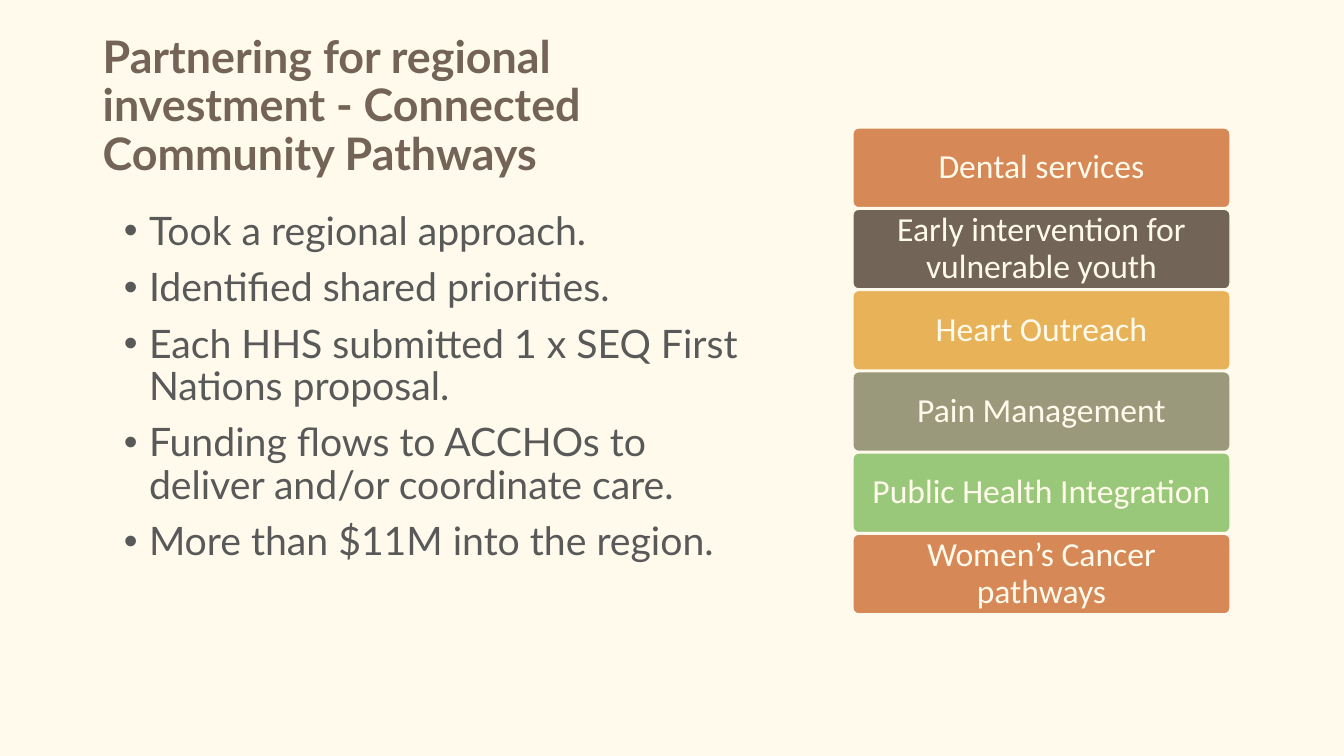
import pptx
import pptx.util
import pptx.dml.color
import pptx.enum.shapes
import pptx.enum.text
import pptx.oxml.ns
import lxml.etree

Inches = pptx.util.Inches
Pt = pptx.util.Pt

COLORS = {
    "cream": "FFFAEB",
    "title": "736457",
    "body": "595959",
    "orange": "D68857",
    "brown": "736458",
    "gold": "E8B259",
    "olive": "9B997B",
    "green": "9AC87A",
}

BULLETS = [
    "Took a regional approach.",
    "Identified shared priorities.",
    "Each HHS submitted 1 x SEQ First Nations proposal.",
    "Funding flows to ACCHOs to deliver and/or coordinate care.",
    "More than $11M into the region.",
]

PATHWAYS = [
    ("Dental services", "orange"),
    ("Early intervention for vulnerable youth", "brown"),
    ("Heart Outreach", "gold"),
    ("Pain Management", "olive"),
    ("Public Health Integration", "green"),
    ("Women’s Cancer pathways", "orange"),
]


class SlideBuilder:
    """Hold the slide and its text style, and draw each kind of element."""

    def __init__(self, prs):
        self.slide = prs.slides.add_slide(prs.slide_layouts[6])
        self.line_spacing = 0.9
        fill = self.slide.background.fill
        fill.solid()
        fill.fore_color.rgb = self.rgb("cream")

    def rgb(self, name):
        return pptx.dml.color.RGBColor.from_string(COLORS[name])

    def add_text(self, p, text, font, size, color, bold=False):
        p.line_spacing = self.line_spacing
        r = p.add_run()
        r.text = text
        r.font.name = font
        r.font.size = Pt(size)
        r.font.bold = bold
        r.font.color.rgb = self.rgb(color)

    def text_frame(self, left, top, width, height):
        sp = self.slide.shapes.add_textbox(
            Inches(left), Inches(top), Inches(width), Inches(height))
        sp.text_frame.word_wrap = True
        return sp.text_frame

    def title(self, text, left, top, width, height):
        tf = self.text_frame(left, top, width, height)
        tf.vertical_anchor = pptx.enum.text.MSO_ANCHOR.MIDDLE
        self.add_text(tf.paragraphs[0], text, "Lato", 32, "title", bold=True)

    def bullets(self, items, left, top, width, height):
        tf = self.text_frame(left, top, width, height)
        for i, item in enumerate(items):
            p = tf.add_paragraph() if i else tf.paragraphs[0]
            pPr = p._p.get_or_add_pPr()
            pPr.set("marL", str(Inches(0.25)))
            pPr.set("indent", str(Inches(-0.25)))
            for tag, key, value in (("a:buFont", "typeface", "Arial"),
                                    ("a:buChar", "char", "•")):
                bullet = lxml.etree.SubElement(pPr, pptx.oxml.ns.qn(tag))
                bullet.set(key, value)
            if i:
                p.space_before = Pt(10)
            self.add_text(p, item, "Lato", 28, "body")

    def block(self, text, color, left, top, width, height):
        sp = self.slide.shapes.add_shape(
            pptx.enum.shapes.MSO_SHAPE.ROUNDED_RECTANGLE,
            Inches(left), Inches(top), Inches(width), Inches(height))
        sp.adjustments[0] = 0.07
        sp.shadow.inherit = False
        sp.fill.solid()
        sp.fill.fore_color.rgb = self.rgb(color)
        sp.line.color.rgb = self.rgb("cream")
        sp.line.width = Pt(1)
        tf = sp.text_frame
        tf.word_wrap = True
        tf.vertical_anchor = pptx.enum.text.MSO_ANCHOR.MIDDLE
        tf.margin_left = tf.margin_right = Inches(0.08)
        tf.margin_top = tf.margin_bottom = Inches(0.06)
        p = tf.paragraphs[0]
        p.alignment = pptx.enum.text.PP_ALIGN.CENTER
        self.add_text(p, text, "Calibri", 24, "cream")


def main():
    prs = pptx.Presentation()
    prs.slide_width = Inches(13.33)
    prs.slide_height = Inches(7.5)
    s = SlideBuilder(prs)
    s.title("Partnering for regional investment - Connected Community Pathways",
            0.92, 0.41, 6.69, 1.31)
    s.bullets(BULLETS, 1.13, 2.05, 6.53, 3.96)
    first_top, last_top = 1.27, 5.3
    pitch = (last_top - first_top) / (len(PATHWAYS) - 1)
    for i, (text, color) in enumerate(PATHWAYS):
        s.block(text, color, 8.46, first_top + i * pitch, 3.74, 0.79)
    prs.save("out.pptx")


if __name__ == "__main__":
    main()
